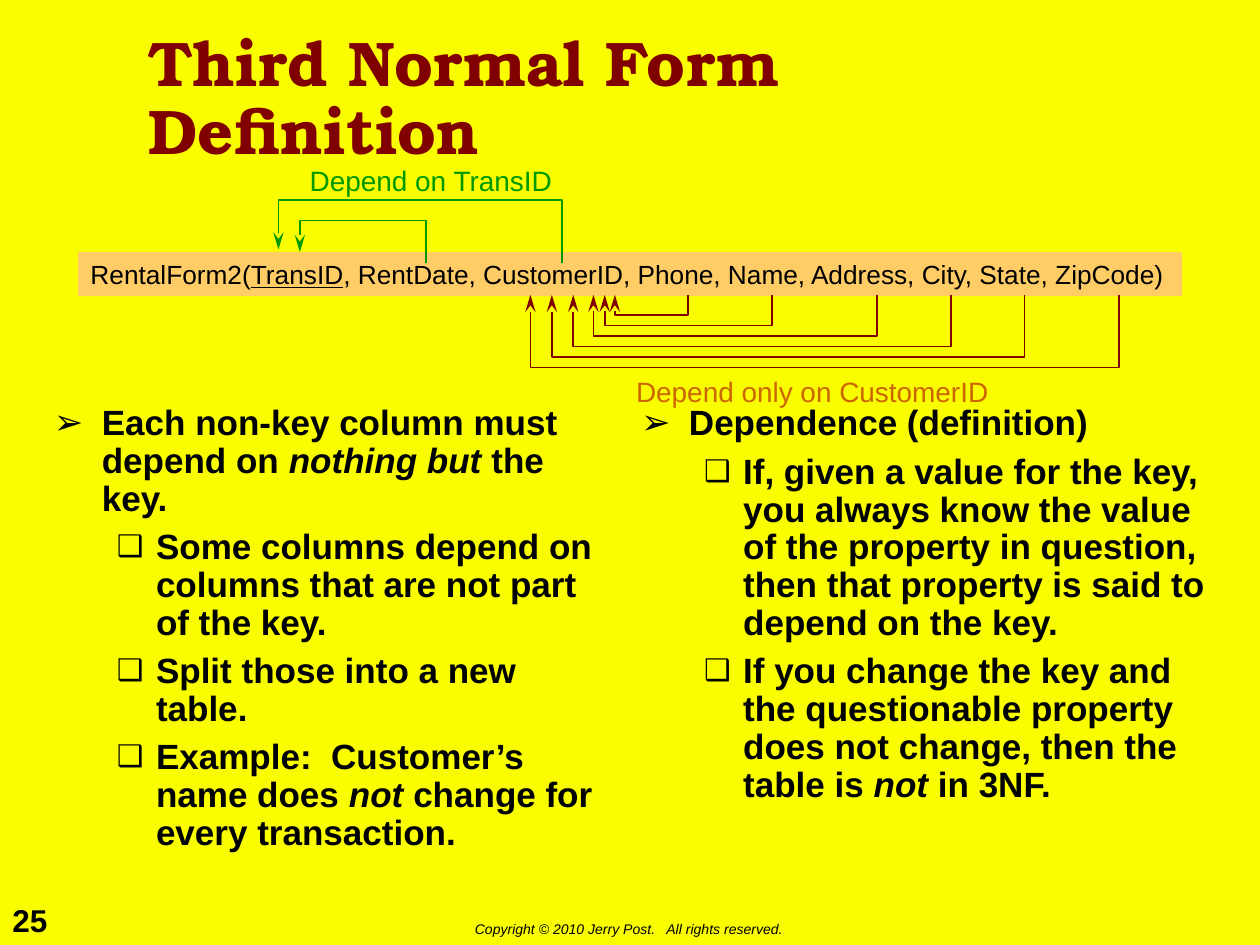
import dataclasses

import lxml.etree
import pptx
import pptx.dml.color
import pptx.enum.text
import pptx.oxml.ns
import pptx.util

Inches = pptx.util.Inches
Pt = pptx.util.Pt
ANCHOR = pptx.enum.text.MSO_ANCHOR
ITALIC = {"italic": True}
UNDERLINE = {"underline": True}


@dataclasses.dataclass(frozen=True)
class Theme:
    background: str = "FAFD00"
    text: str = "000000"
    maroon: str = "800000"
    green: str = "009900"
    orange: str = "CC6600"
    band: str = "FFCC66"
    heading_font: str = "TeX Gyre Bonum"
    body_font: str = "Arial"
    title_size: float = 36
    body_size: float = 20
    number_size: float = 18
    label_size: float = 16
    relation_size: float = 15
    footer_size: float = 8


THEME = Theme()
BULLETS = (
    {"char": "➢", "margin": 0.38, "indent": -0.38, "size": None},
    {"char": "❑", "margin": 0.81, "indent": -0.31, "size": 85},
)
LEFT_POINTS = (
    (0, [("Each non-key column must depend on ", {}), ("nothing but", ITALIC), (" the key.", {})]),
    (1, [("Some columns depend on columns that are not part of the key.", {})]),
    (1, [("Split those into a new table.", {})]),
    (1, [("Example:  Customer’s name does ", {}), ("not ", ITALIC), ("change for every transaction.", {})]),
)
RIGHT_POINTS = (
    (0, [("Dependence (definition)", {})]),
    (1, [("If, given a value for the key, you always know the value of the property in question, "
          "then that property is said to depend on the key.", {})]),
    (1, [("If you change the key and the questionable property does not change, "
          "then the table is ", {}), ("not", ITALIC), (" in 3NF.", {})]),
)
RELATION = [
    ("RentalForm2(", {}),
    ("TransID", UNDERLINE),
    (", RentDate, CustomerID, Phone, Name, Address, City, State, ZipCode)", {}),
]
TRANSACTION_ROUTES = ((3.38, 2.38, 1.75, 2), (4.46, 2.21, 1.59, 1.98))
CUSTOMER_ROUTES = ((5.46, 4.88), (6.13, 4.8), (6.96, 4.71), (7.55, 4.55), (8.13, 4.38), (8.88, 4.21))


def color(value):
    return pptx.dml.color.RGBColor.from_string(value)


def add_element(parent, tag, **attributes):
    return lxml.etree.SubElement(parent, pptx.oxml.ns.qn(tag), attributes)


def fill_solid(target, value):
    target.fill.solid()
    target.fill.fore_color.rgb = color(value)


def add_runs(paragraph, runs, size, ink=THEME.text, name=THEME.body_font, **formats):
    for text, extra in runs:
        run = paragraph.add_run()
        run.text = text
        run.font.color.rgb = color(ink)
        values = {"name": name, "size": Pt(size), **formats, **extra}
        for key, value in values.items():
            setattr(run.font, key, value)


def prepare_frame(shape, wrap, anchor=ANCHOR.TOP):
    frame = shape.text_frame
    values = {
        "word_wrap": wrap,
        "vertical_anchor": anchor,
        "margin_left": Inches(0.1),
        "margin_right": Inches(0.1),
        "margin_top": Inches(0.05),
        "margin_bottom": Inches(0.05),
    }
    for key, value in values.items():
        setattr(frame, key, value)
    return frame


def add_label(slide, box, runs, size, wrap=False, anchor=ANCHOR.TOP, spacing=None, fill=None, **formats):
    shape = slide.shapes.add_textbox(*map(Inches, box))
    if fill:
        fill_solid(shape, fill)
    paragraph = prepare_frame(shape, wrap, anchor).paragraphs[0]
    paragraph.line_spacing = spacing
    add_runs(paragraph, runs, size, **formats)


def set_bullet(paragraph, level):
    bullet = BULLETS[level]
    properties = paragraph._p.get_or_add_pPr()
    properties.set("marL", str(Inches(bullet["margin"])))
    properties.set("indent", str(Inches(bullet["indent"])))
    add_element(add_element(properties, "a:buClr"), "a:srgbClr", val=THEME.text)
    if bullet["size"]:
        add_element(properties, "a:buSzPct", val=str(bullet["size"] * 1000))
    add_element(properties, "a:buFont", typeface=THEME.body_font)
    add_element(properties, "a:buChar", char=bullet["char"])


def add_bullets(slide, box, points):
    frame = prepare_frame(slide.shapes.add_textbox(*map(Inches, box)), True)
    for index, (level, runs) in enumerate(points):
        paragraph = frame.add_paragraph() if index else frame.paragraphs[0]
        set_bullet(paragraph, level)
        paragraph.level = level
        paragraph.line_spacing = 0.9
        paragraph.space_before = Pt(6 if index else 0)
        add_runs(paragraph, runs, THEME.body_size, bold=True)


def add_dependency(slide, source, target, turn, start, end, ink):
    corners = ((source, turn), (target, turn), (target, end))
    builder = slide.shapes.build_freeform(Inches(source), Inches(start))
    builder.add_line_segments([(Inches(x), Inches(y)) for x, y in corners], close=False)
    shape = builder.convert_to_shape()
    shape.shadow.inherit = False
    shape.fill.background()
    shape.line.color.rgb = color(ink)
    shape.line.width = Pt(1)
    add_element(shape.line._get_or_add_ln(), "a:tailEnd", type="stealth", w="med", len="lg")


def main():
    presentation = pptx.Presentation()
    presentation.slide_width = Inches(10)
    presentation.slide_height = Inches(7.5)
    slide = presentation.slides.add_slide(presentation.slide_layouts[6])
    fill_solid(slide.background, THEME.background)

    add_label(slide, (0, 7.1, 0.5, 0.4), [("25", {})], THEME.number_size, bold=True)
    add_label(slide, (3.67, 7.26, 2.68, 0.24),
              [("Copyright © 2010 Jerry Post.   All rights reserved.", {})],
              THEME.footer_size, italic=True)
    add_label(slide, (1.08, 0.17, 7.83, 1.25), [("Third Normal Form Definition", {})],
              THEME.title_size, wrap=True, anchor=ANCHOR.MIDDLE, spacing=0.9,
              ink=THEME.maroon, name=THEME.heading_font, bold=True)
    add_bullets(slide, (0.33, 3.17, 4.51, 3.83), LEFT_POINTS)
    add_bullets(slide, (4.99, 3.17, 4.76, 3.39), RIGHT_POINTS)

    add_label(slide, (0.62, 2, 8.76, 0.35), RELATION, THEME.relation_size, fill=THEME.band)
    for source, target, turn, end in TRANSACTION_ROUTES:
        add_dependency(slide, source, target, turn, 2.09, end, THEME.green)
    for index, (source, target) in enumerate(CUSTOMER_ROUTES):
        add_dependency(slide, source, target, 2.5 + index / 12, 2.34, 2.34, THEME.maroon)
    add_label(slide, (4.95, 2.92, 3, 0.37), [("Depend only on CustomerID", {})],
              THEME.label_size, ink=THEME.orange)
    add_label(slide, (2.36, 1.25, 2.14, 0.37), [("Depend on TransID", {})],
              THEME.label_size, ink=THEME.green)
    presentation.save("out.pptx")


if __name__ == "__main__":
    main()
